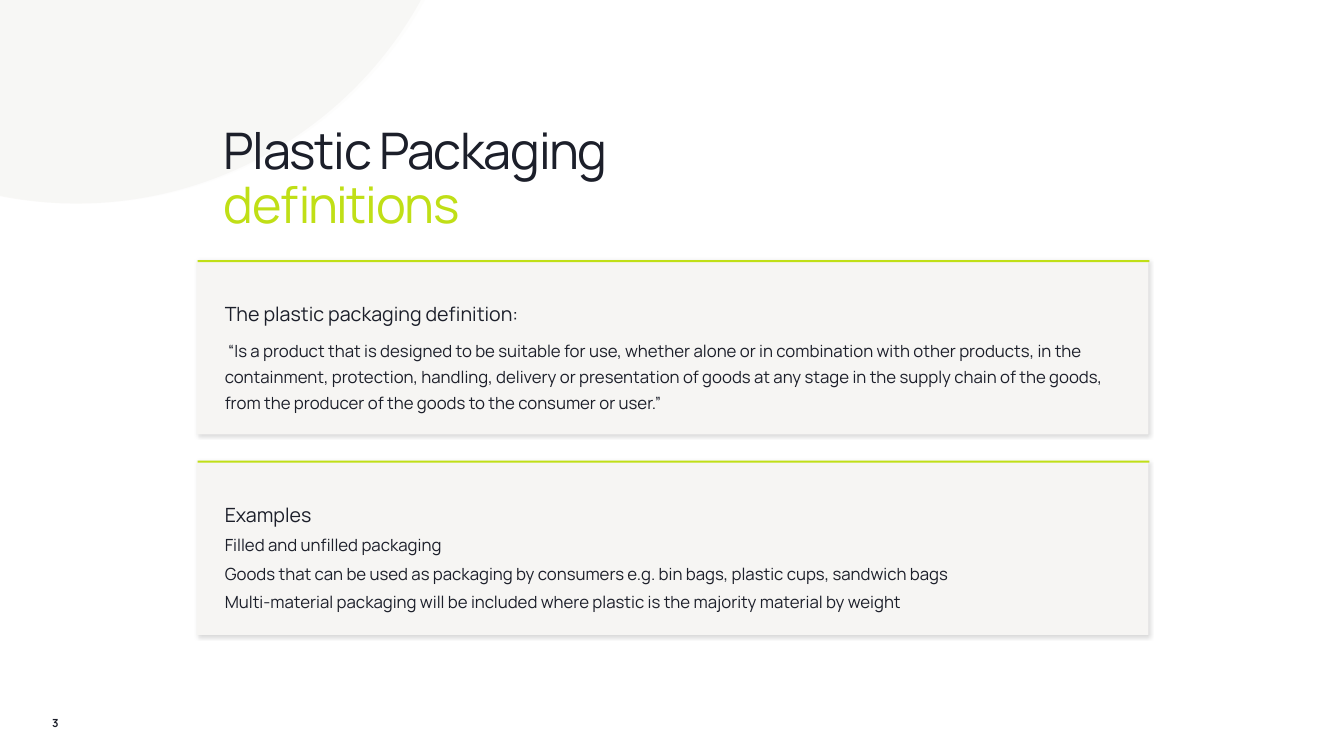
import dataclasses
import pptx
import pptx.util
import pptx.dml.color
import pptx.enum.shapes
import pptx.enum.text
import pptx.oxml
import pptx.oxml.ns

Inches = pptx.util.Inches
Pt = pptx.util.Pt
SHAPE = pptx.enum.shapes.MSO_SHAPE
ALIGN = pptx.enum.text.PP_ALIGN
ANCHOR = pptx.enum.text.MSO_ANCHOR


@dataclasses.dataclass(frozen=True)
class Theme:
    font: str = "Manrope"
    ink: str = "1C1F2A"
    lime: str = "C0DF16"
    panel: str = "F6F5F3"
    sand: str = "E1DED7"
    title: int = 36
    head: int = 14
    body: int = 12
    small: int = 8


THEME = Theme()

CARDS = [
    (2.58, "The plastic packaging definition:", 1.3, [
        " “Is a product that is designed to be suitable for use, whether alone "
        "or in combination with other products, in the containment, protection, "
        "handling, delivery or presentation of goods at any stage in the supply "
        "chain of the goods, from the producer of the goods to the consumer or user.”",
    ]),
    (4.57, "Examples", 1.0, [
        "Filled and unfilled packaging",
        "Goods that can be used as packaging by consumers e.g. bin bags, "
        "plastic cups, sandwich bags",
        "Multi-material packaging will be included where plastic is the "
        "majority material by weight",
    ]),
]


def add_run(para, text, size, color=THEME.ink, bold=False):
    run = para.add_run()
    run.text = text
    run.font.name = THEME.font
    run.font.size = Pt(size)
    run.font.bold = bold
    run.font.color.rgb = pptx.dml.color.RGBColor.from_string(color)
    return run


def add_form(shapes, kind, box, color):
    form = shapes.add_shape(kind, *map(Inches, box))
    form.shadow.inherit = False
    form.fill.solid()
    form.fill.fore_color.rgb = pptx.dml.color.RGBColor.from_string(color)
    form.line.fill.background()
    return form


def set_frame(form, insets, anchor=ANCHOR.TOP):
    frame = form.text_frame
    frame.word_wrap = True
    frame.vertical_anchor = anchor
    (frame.margin_left, frame.margin_top,
     frame.margin_right, frame.margin_bottom) = map(Inches, insets)
    return frame


def add_shadow(form):
    old = form._element.spPr.find(pptx.oxml.ns.qn("a:effectLst"))
    old.append(pptx.oxml.parse_xml(
        f'<a:outerShdw {pptx.oxml.ns.nsdecls("a")} blurRad="{Pt(3)}" '
        f'dist="{Pt(1)}" dir="2700000" algn="tl" rotWithShape="0">'
        '<a:srgbClr val="000000"><a:alpha val="15000"/></a:srgbClr>'
        '</a:outerShdw>'))


def add_disc(slide, box, alpha):
    disc = add_form(slide.shapes, SHAPE.OVAL, box, THEME.sand)
    tint = disc._element.spPr.find(".//" + pptx.oxml.ns.qn("a:srgbClr"))
    tint.append(pptx.oxml.parse_xml(
        f'<a:alpha {pptx.oxml.ns.nsdecls("a")} val="{alpha * 1000}"/>'))


def add_title(slide, box):
    form = slide.shapes.add_textbox(*map(Inches, box))
    para = set_frame(form, (0, 0.21, 0, 0)).paragraphs[0]
    para.line_spacing = 0.9
    first = add_run(para, "Plastic Packaging", THEME.title)
    para.add_line_break()
    last = add_run(para, "definitions", THEME.title, THEME.lime)
    for run in (first, last):
        run.font._element.set("spc", "-100")


def add_card(slide, box, head, pitch, lines):
    left, top, width, height = box
    group = slide.shapes.add_group_shape()
    panel = add_form(group.shapes, SHAPE.RECTANGLE, box, THEME.panel)
    add_shadow(panel)
    frame = set_frame(panel, (0.28, 0.35, 0.2, 0.05))
    para = frame.paragraphs[0]
    para.alignment = ALIGN.LEFT
    para.line_spacing = 1.3
    add_run(para, head, THEME.head)
    for line in lines:
        para = frame.add_paragraph()
        para.alignment = ALIGN.LEFT
        para.line_spacing = pitch
        para.space_before = Pt(6)
        add_run(para, line, THEME.body)
    add_form(group.shapes, SHAPE.RECTANGLE, (left + 0.01, top, width, 0.02), THEME.lime)


def add_number(slide, box):
    form = slide.shapes.add_textbox(*map(Inches, box))
    para = set_frame(form, (0.1, 0.05, 0.1, 0.05), ANCHOR.MIDDLE).paragraphs[0]
    para.alignment = ALIGN.CENTER
    add_run(para, "3", THEME.small, bold=True)


def main():
    deck = pptx.Presentation()
    deck.slide_width = Inches(13.33)
    deck.slide_height = Inches(7.5)
    slide = deck.slides.add_slide(deck.slide_layouts[6])
    for left, alpha in ((-3.15, 18), (-3.11, 5)):
        add_disc(slide, (left, -5.79, 7.81, 7.81), alpha)
    add_number(slide, (0, 6.97, 1.1, 0.4))
    add_title(slide, (2.22, 1.04, 10.01, 1.37))
    for top, head, pitch, lines in CARDS:
        add_card(slide, (1.95, top, 9.44, 1.73), head, pitch, lines)
    deck.save("out.pptx")


if __name__ == "__main__":
    main()
